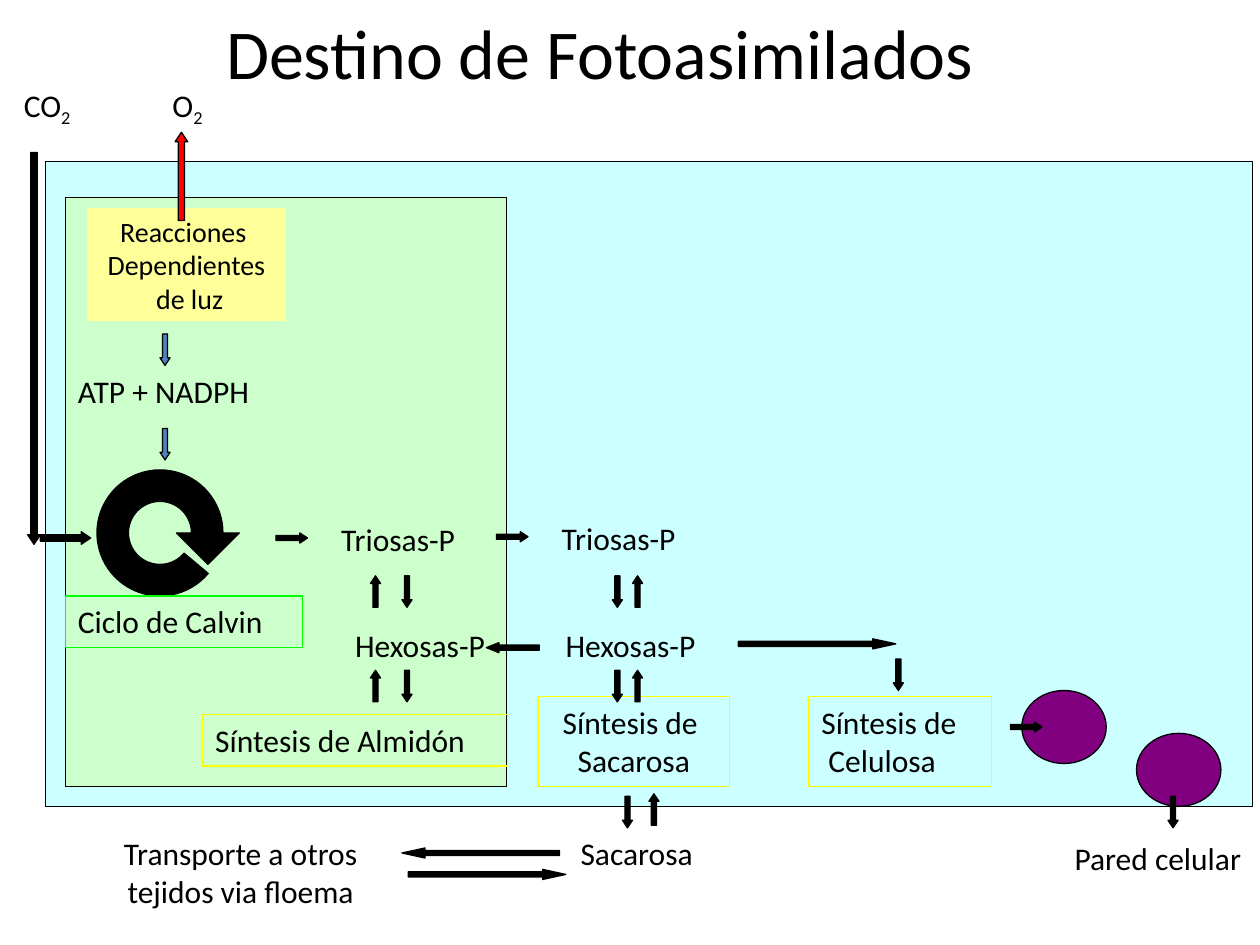
import math
import pptx
import pptx.dml.color
import pptx.enum.shapes
import pptx.enum.text
import pptx.util
from pptx.util import Inches

SHAPE = pptx.enum.shapes.MSO_SHAPE
ALIGN = pptx.enum.text.PP_ALIGN
ANCHOR = pptx.enum.text.MSO_ANCHOR


def paint(shape, fill=None, line=None):
    shape.shadow.inherit = False
    for target, color in ((shape.fill, fill), (shape.line.fill, line)):
        if color:
            target.solid()
            target.fore_color.rgb = pptx.dml.color.RGBColor.from_string(color)
        else:
            target.background()
    if line:
        shape.line.width = pptx.util.Pt(0.75)


def format_text(paragraph, size, align):
    paragraph.alignment = align
    for run in paragraph.runs:
        run.font.name = "Calibri"
        run.font.size = pptx.util.Pt(size)
        run.font.color.rgb = pptx.dml.color.RGBColor.from_string("000000")


presentation = pptx.Presentation()
presentation.slide_width = Inches(10)
presentation.slide_height = Inches(7.5)
slide = presentation.slides.add_slide(presentation.slide_layouts[5])
shapes = slide.shapes

title = shapes.title
title.left, title.top = Inches(0.51), Inches(-0.22)
title.width, title.height = Inches(8.5), Inches(1.25)
title.text_frame.text = "Destino de Fotoasimilados"
title.text_frame.vertical_anchor = ANCHOR.MIDDLE
format_text(title.text_frame.paragraphs[0], 40, ALIGN.CENTER)

areas = [
    (SHAPE.RECTANGLE, 0.36, 1.28, 9.58, 5.12, "CCFFFF"),
    (SHAPE.RECTANGLE, 0.52, 1.57, 3.5, 4.67, "CCFFCC"),
    (SHAPE.OVAL, 8.11, 5.48, 0.67, 0.58, "800080"),
    (SHAPE.OVAL, 9.02, 5.82, 0.67, 0.58, "800080"),
]
for kind, left, top, width, height, fill in areas:
    area = shapes.add_shape(kind, Inches(left), Inches(top), Inches(width), Inches(height))
    paint(area, fill, "000000")

center_x, center_y, outer, inner = 1.27, 4.23, 0.5, 0.25
points = []
for radius, angles in ((inner, range(360, 39, -5)), (outer, range(40, 361, 5))):
    for angle in angles:
        turn = math.radians(angle)
        points.append((center_x + radius * math.cos(turn), center_y + radius * math.sin(turn)))
points += [(1.9, 4.23), (1.65, 4.48), (1.4, 4.23)]
outline = [(Inches(x), Inches(y)) for x, y in points]
builder = shapes.build_freeform(*outline[0])
builder.add_line_segments(outline[1:], close=True)
calvin_cycle = builder.convert_to_shape()
paint(calvin_cycle, "000000", "000000")

boxes = [
    (0.69, 1.65, 1.58, 0.9, "Reacciones \nDependientes\n de luz", 16, ALIGN.CENTER, "FFFF99", None),
    (0.52, 4.73, 1.88, 0.41, "Ciclo de Calvin", 18, ALIGN.LEFT, None, "00FF00"),
    (1.61, 5.67, 2.42, 0.41, "Síntesis de Almidón", 18, ALIGN.LEFT, None, "FFFF00"),
    (4.27, 5.53, 1.52, 0.71, "Síntesis de \nSacarosa", 18, ALIGN.CENTER, None, "FFFF00"),
    (6.42, 5.53, 1.45, 0.71, "Síntesis de\n Celulosa", 18, ALIGN.LEFT, None, "FFFF00"),
]
labels = [
    (0.09, 0.63, 0.59, 0.4, "CO₂", ALIGN.LEFT),
    (1.27, 0.63, 0.45, 0.4, "O₂", ALIGN.LEFT),
    (0.52, 2.9, 1.85, 0.4, "ATP + NADPH", ALIGN.LEFT),
    (2.61, 4.08, 1.27, 0.4, "Triosas-P", ALIGN.LEFT),
    (4.36, 4.07, 1.27, 0.4, "Triosas-P", ALIGN.LEFT),
    (2.72, 4.92, 1.42, 0.4, "Hexosas-P", ALIGN.LEFT),
    (4.39, 4.92, 1.42, 0.4, "Hexosas-P", ALIGN.LEFT),
    (4.36, 6.57, 1.33, 0.4, " Sacarosa", ALIGN.CENTER),
    (0.72, 6.57, 2.38, 0.7, " Transporte a otros \ntejidos via floema", ALIGN.CENTER),
    (8.43, 6.61, 1.67, 0.4, "Pared celular", ALIGN.LEFT),
]
text_items = boxes + [(*label[:5], 18, label[5], None, None) for label in labels]
for left, top, width, height, text, size, align, fill, line in text_items:
    place = Inches(left), Inches(top), Inches(width), Inches(height)
    if fill or line:
        box = shapes.add_shape(SHAPE.RECTANGLE, *place)
        paint(box, fill, line)
    else:
        box = shapes.add_textbox(*place)
    frame = box.text_frame
    frame.text = text.replace("₂", "")
    frame.word_wrap = bool(fill)
    frame.auto_size = pptx.enum.text.MSO_AUTO_SIZE.SHAPE_TO_FIT_TEXT
    frame.vertical_anchor = ANCHOR.TOP
    if text.endswith("₂"):
        subscript = frame.paragraphs[0].add_run()
        subscript.text = "2"
        subscript.font._element.set("baseline", "-25000")
    for paragraph in frame.paragraphs:
        format_text(paragraph, size, align)

UP, DOWN = SHAPE.UP_ARROW, SHAPE.DOWN_ARROW
LEFT, RIGHT = SHAPE.LEFT_ARROW, SHAPE.RIGHT_ARROW
BLACK, BLUE, RED = "000000", "4F81BD", "FF0000"
arrows = [
    (DOWN, 0.22, 1.21, 0.1, 3.11, 0.75, BLACK),
    (RIGHT, 0.32, 4.22, 0.4, 0.1, 0.75, BLACK),
    (UP, 1.39, 1.05, 0.1, 0.7, 0.75, RED),
    (DOWN, 1.27, 2.65, 0.08, 0.25, 0.75, BLUE),
    (DOWN, 1.27, 3.4, 0.08, 0.25, 0.75, BLUE),
    (RIGHT, 2.19, 4.23, 0.25, 0.08, 0.75, BLACK),
    (RIGHT, 3.94, 4.22, 0.25, 0.08, 0.75, BLACK),
    (LEFT, 3.86, 5.1, 0.42, 0.08, 1.25, BLACK),
    (RIGHT, 5.86, 5.07, 1.25, 0.08, 2.29, BLACK),
    (DOWN, 7.09, 5.23, 0.08, 0.25, 0.75, BLACK),
    (RIGHT, 8.02, 5.73, 0.25, 0.08, 0.75, BLACK),
    (DOWN, 9.27, 6.32, 0.08, 0.25, 0.75, BLACK),
    (DOWN, 4.94, 6.32, 0.08, 0.25, 0.75, BLACK),
    (UP, 5.15, 6.3, 0.08, 0.25, 0.75, BLACK),
    (LEFT, 3.19, 6.73, 1.25, 0.08, 2.29, BLACK),
    (RIGHT, 3.24, 6.9, 1.25, 0.08, 2.29, BLACK),
]
for top in (4.57, 5.32):
    for kind, left in ((UP, 2.94), (DOWN, 3.19), (DOWN, 4.86), (UP, 5.02)):
        arrows.append((kind, left, top, 0.08, 0.25, 0.75, BLACK))
for kind, left, top, width, height, head, fill in arrows:
    arrow = shapes.add_shape(kind, Inches(left), Inches(top), Inches(width), Inches(height))
    arrow.adjustments[0] = 0.5
    arrow.adjustments[1] = head
    paint(arrow, fill, BLACK)

presentation.save("out.pptx")
